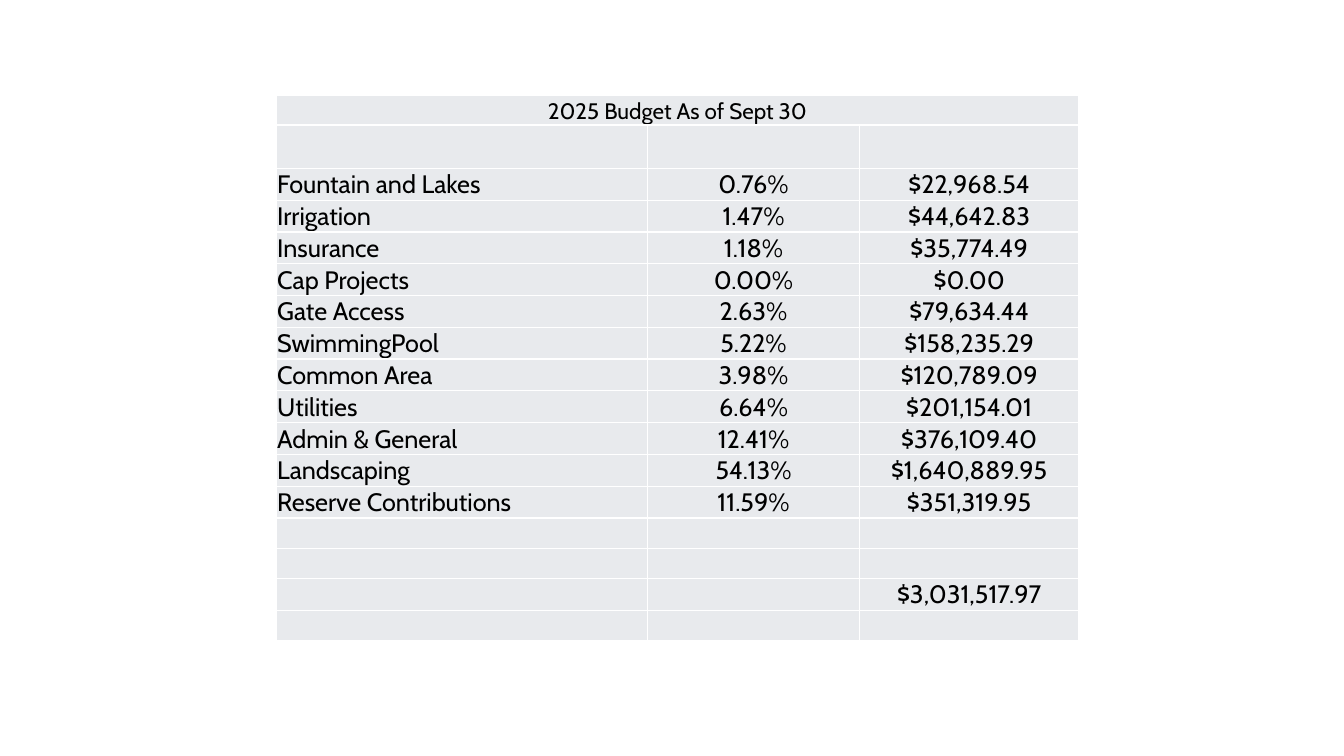
from dataclasses import dataclass

from lxml import etree
from pptx import Presentation
from pptx.dml.color import RGBColor
from pptx.enum.text import MSO_ANCHOR, PP_ALIGN
from pptx.oxml.ns import qn
from pptx.util import Inches, Pt

LEFT, CENTER = PP_ALIGN.LEFT, PP_ALIGN.CENTER
BOTTOM = MSO_ANCHOR.BOTTOM


@dataclass(frozen=True)
class Theme:
    font: str = "Cabin"
    text: str = "000000"
    band: str = "E8EAED"
    border: str = "FFFFFF"
    heading_size: int = 16
    body_size: int = 18
    border_width: int = 1


THEME = Theme()
SLIDE_WIDTH, SLIDE_HEIGHT = Inches(40 / 3), Inches(7.5)

TABLE_LEFT, TABLE_TOP = 20.55, 12.67
COLUMN_SHARES = (27.6, 15.83, 16.27)
TEXT_ROW, SPACER_ROW, EMPTY_ROW = 3.87, 5.73, 4

HEADING = "2025 Budget As of Sept 30"
TOTAL = "$3,031,517.97"
BUDGET_LINES = [
    ("Fountain and Lakes", "0.76%", "$22,968.54"),
    ("Irrigation", "1.47%", "$44,642.83"),
    ("Insurance", "1.18%", "$35,774.49"),
    ("Cap Projects", "0.00%", "$0.00"),
    ("Gate Access", "2.63%", "$79,634.44"),
    ("SwimmingPool", "5.22%", "$158,235.29"),
    ("Common Area", "3.98%", "$120,789.09"),
    ("Utilities", "6.64%", "$201,154.01"),
    ("Admin & General", "12.41%", "$376,109.40"),
    ("Landscaping", "54.13%", "$1,640,889.95"),
    ("Reserve Contributions", "11.59%", "$351,319.95"),
]
EMPTY = ("", "", "")
BUDGET_ROWS = [
    (TEXT_ROW, (HEADING, "", "")),
    (SPACER_ROW, EMPTY),
    *[(TEXT_ROW, line) for line in BUDGET_LINES],
    (EMPTY_ROW, EMPTY),
    (EMPTY_ROW, EMPTY),
    (TEXT_ROW, ("", "", TOTAL)),
    (EMPTY_ROW, EMPTY),
]
CELL_FORMAT = {
    "vertical_anchor": BOTTOM,
    "margin_left": Inches(0.01),
    "margin_right": Inches(0.01),
    "margin_top": Inches(0.01),
    "margin_bottom": 0,
}


def across(percent):
    return round(SLIDE_WIDTH * percent / 100)


def down(percent):
    return round(SLIDE_HEIGHT * percent / 100)


def apply_format(target, values):
    for attribute, value in values.items():
        setattr(target, attribute, value)


def add_borders(cell):
    properties = cell._tc.get_or_add_tcPr()
    for side in ("a:lnL", "a:lnR", "a:lnT", "a:lnB"):
        line = etree.SubElement(properties, qn(side), w=str(Pt(THEME.border_width)))
        fill = etree.SubElement(line, qn("a:solidFill"))
        etree.SubElement(fill, qn("a:srgbClr"), val=THEME.border)


def style_cell(cell):
    apply_format(cell, CELL_FORMAT)
    add_borders(cell)
    cell.fill.solid()
    cell.fill.fore_color.rgb = RGBColor.from_string(THEME.band)


def write_cell(cell, text, size, alignment):
    paragraph = cell.text_frame.paragraphs[0]
    paragraph.alignment = alignment
    if not text:
        etree.SubElement(paragraph._p, qn("a:endParaRPr"), sz=str(THEME.heading_size * 100))
        return
    run = paragraph.add_run()
    run.text = text
    apply_format(run.font, {"name": THEME.font, "size": Pt(size), "bold": False})
    run.font.color.rgb = RGBColor.from_string(THEME.text)


def add_budget_table(slide):
    table = slide.shapes.add_table(
        len(BUDGET_ROWS), len(COLUMN_SHARES),
        across(TABLE_LEFT), down(TABLE_TOP),
        across(sum(COLUMN_SHARES)), down(sum(height for height, _ in BUDGET_ROWS)),
    ).table
    apply_format(table, {"first_row": False, "horz_banding": False})
    for column, share in zip(table.columns, COLUMN_SHARES):
        column.width = across(share)
    for row_index, (height, texts) in enumerate(BUDGET_ROWS):
        table.rows[row_index].height = down(height)
        is_heading = row_index == 0
        size = THEME.heading_size if is_heading else THEME.body_size
        for column_index, text in enumerate(texts):
            cell = table.cell(row_index, column_index)
            style_cell(cell)
            alignment = CENTER if is_heading or column_index else LEFT
            write_cell(cell, text, size, alignment)
    table.cell(0, 0).merge(table.cell(0, len(COLUMN_SHARES) - 1))


def main():
    presentation = Presentation()
    apply_format(presentation, {"slide_width": SLIDE_WIDTH, "slide_height": SLIDE_HEIGHT})
    slide = presentation.slides.add_slide(presentation.slide_layouts[6])
    add_budget_table(slide)
    presentation.save("out.pptx")


if __name__ == "__main__":
    main()
